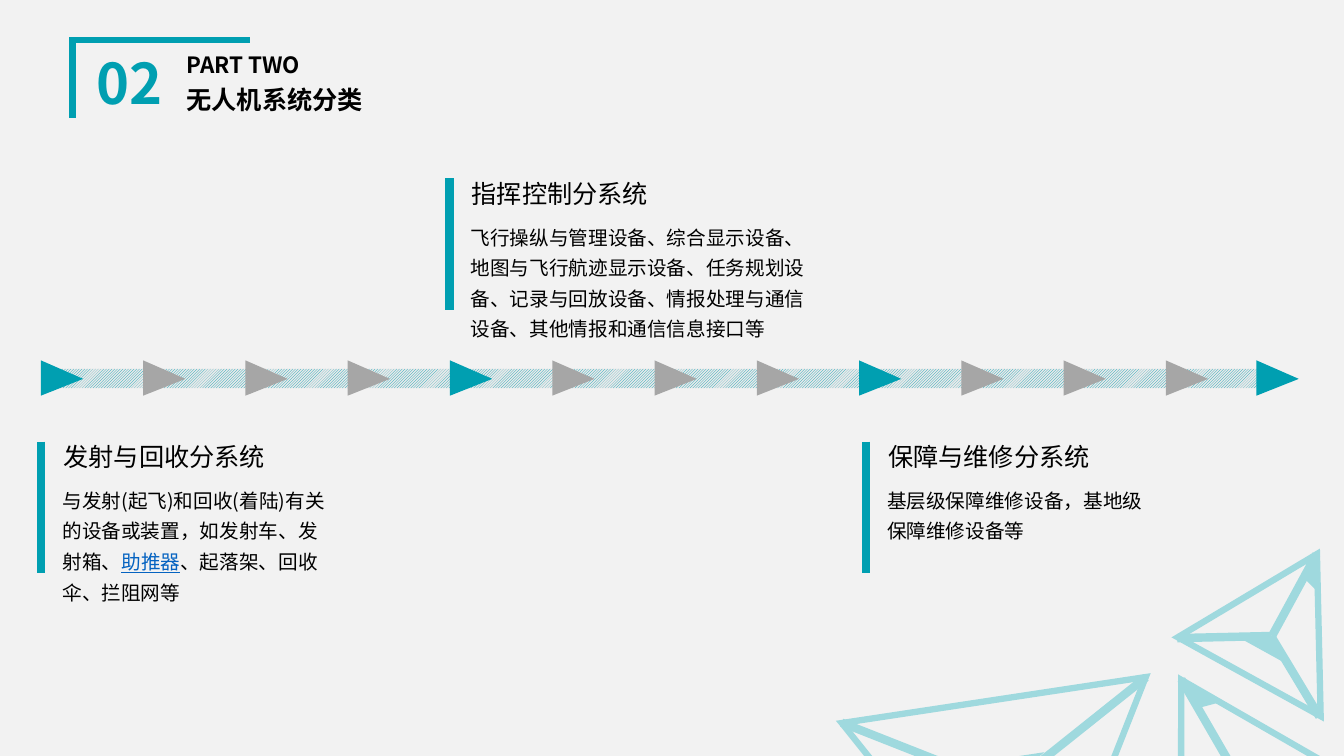
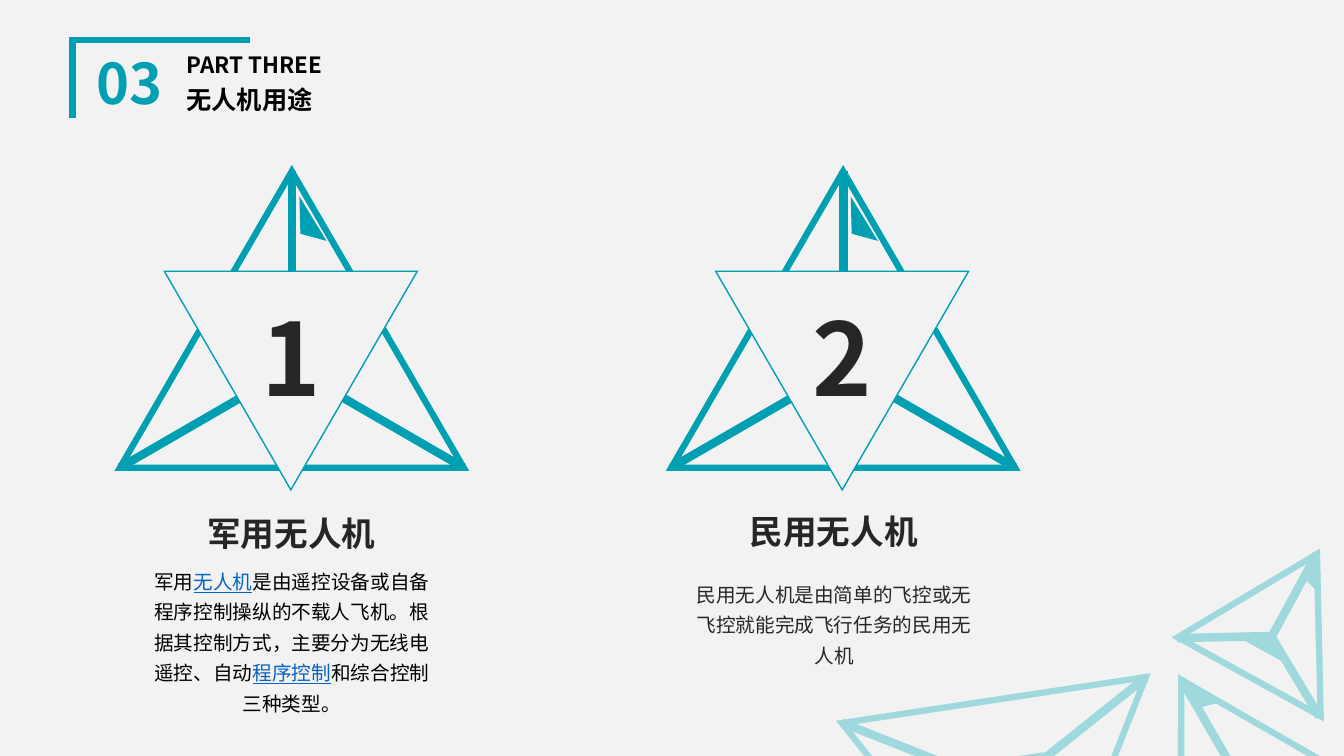
from lxml.etree import SubElement
from pptx import Presentation
from pptx.dml.color import RGBColor
from pptx.enum.dml import MSO_PATTERN
from pptx.enum.shapes import MSO_CONNECTOR, MSO_SHAPE
from pptx.enum.text import MSO_ANCHOR, MSO_AUTO_SIZE, PP_ALIGN
from pptx.oxml.ns import qn
from pptx.util import Pt

FONT = "Noto Sans CJK SC"
TEAL = RGBColor(0x00, 0x9F, 0xB1)
PALE = RGBColor(0x9F, 0xD9, 0xDE)
PAPER = RGBColor(0xF2, 0xF2, 0xF2)
STRIPE = RGBColor(0xE9, 0xE9, 0xE9)
GREY = RGBColor(0xA6, 0xA6, 0xA6)
BLACK = RGBColor(0, 0, 0)
DARK = RGBColor(0x26, 0x26, 0x26)
LINK = RGBColor(0x05, 0x63, 0xC1)

# Header placeholders: idx -> box and format
HEADER = {
    1: dict(box=(59, 35.3, 67, 52.6), size=40, color=TEAL, align=PP_ALIGN.CENTER),
    3: dict(box=(126, 35.3, 192.2, 24.5), size=16, color=BLACK),
    0: dict(box=(126, 56.2, 192.2, 31.7), size=18, color=BLACK),
}
BRACKET = [(51.8, 84.2), (51.8, 28.8), (178.6, 28.8)]

# Figures: outline (box, rotation, weight), solid (box, rotation),
# flag (corners), strut (from, to)
CORNER_FIGURES = [
    [("outline", (614.2, 499, 219.6, 189.4), 171.4, 4.5),
     ("strut", (818.6, 483.8), (719.3, 563)),
     ("strut", (601.2, 516.2), (720, 563)),
     ("solid", (689, 542.2, 56.9, 17.3), 171.4)],
    [("outline", (803.5, 477.4, 141.8, 122.4), 330, 4.5),
     ("strut", (843.8, 485.3), (884.2, 555.1)),
     ("flag", [(858.2, 504.7), (869, 501.8), (850.3, 491)])],
    [("outline", (858.2, 389.5, 116.6, 100.1), 28.9, 4.5),
     ("strut", (940.3, 396), (908.6, 454.3)),
     ("strut", (841, 455.8), (907.9, 454.3)),
     ("strut", (942.5, 511.9), (907.9, 454.3)),
     ("solid", (889.9, 455.8, 30.2, 9.4), 28.9),
     ("flag", [(933.1, 414), (939.6, 420.5), (938.9, 403.2)])],
]
EMBLEM = [
    ("outline", (0, 122.4, 245.5, 211.7), 0, 4.5),
    ("strut", (123, 122.4), (123, 262.4)),
    ("strut", (0, 334), (123, 262.8)),
    ("strut", (245.5, 334), (122.5, 262.8)),
    ("solid", (90.7, 272.2, 64, 19.4), 0),
    ("flag", [(128.9, 167), (147.6, 172.1), (128.2, 140.4)]),
    ("outline", (31.7, 193.7, 180.7, 156.2), 180, 1),
]

# Words between bars are shown as links
SUBSYSTEMS = [
    (29.5, 315.4, 206, "发射与回收分系统",
     "与发射(起飞)和回收(着陆)有关的设备或装置，如发射车、发射箱、|助推器|、起落架、回收伞、拦阻网等"),
    (321.1, 127.4, 255, "指挥控制分系统",
     "飞行操纵与管理设备、综合显示设备、地图与飞行航迹显示设备、任务规划设备、"
     "记录与回放设备、情报处理与通信设备、其他情报和通信信息接口等"),
    (618.5, 315.4, 206, "保障与维修分系统", "基层级保障维修设备，基地级保障维修设备等"),
]
# number, emblem left, title position, text position, text colour, title, text
USES = [
    ("1", 85.7, (140.4, 362.9), (99.4, 398.2), BLACK, "军用无人机",
     "军用|无人机|是由遥控设备或自备程序控制操纵的不载人飞机。"
     "根据其控制方式，主要分为无线电遥控、自动|程序控制|和综合控制三种类型。"),
    ("2", 479.5, (527.8, 361.4), (486.7, 407.5), DARK, "民用无人机",
     "民用无人机是由简单的飞控或无飞控就能完成飞行任务的民用无人机"),
]


def pts(*values):
    return [Pt(v) for v in values]


def paint(shape, fill=None, line=None, weight=1):
    shape.shadow.inherit = False
    if fill is None:
        shape.fill.background()
    else:
        shape.fill.solid()
        shape.fill.fore_color.rgb = fill
    if line is None:
        shape.line.fill.background()
    else:
        shape.line.color.rgb = line
        shape.line.width = Pt(weight)
        SubElement(shape.line._get_or_add_ln(), qn("a:miter"), lim="800000")
    return shape


def triangle(shapes, box, rotation, **colors):
    shape = paint(shapes.add_shape(MSO_SHAPE.ISOSCELES_TRIANGLE, *pts(*box)), **colors)
    shape.rotation = rotation
    return shape


def polyline(shapes, corners, close, **colors):
    first, *rest = [pts(*c) for c in corners]
    builder = shapes.build_freeform(*first)
    builder.add_line_segments(rest, close=close)
    return paint(builder.convert_to_shape(), **colors)


def strut(shapes, start, end, color):
    line = shapes.add_connector(MSO_CONNECTOR.STRAIGHT, *pts(*start, *end))
    line.line.color.rgb = color
    line.line.width = Pt(6)
    SubElement(line._element.spPr, qn("a:effectLst"))


def draw_figure(s, parts, color, edge=None, dx=0):
    group = s.shapes.add_group_shape()

    def shift(point):
        return (point[0] + dx, *point[1:])

    for kind, *args in parts:
        if kind == "strut":
            strut(group.shapes, *map(shift, args), color)
        elif kind == "flag":
            polyline(group.shapes, map(shift, args[0]), True, fill=color, line=edge)
        elif kind == "solid":
            triangle(group.shapes, shift(args[0]), args[1], fill=color, line=edge)
        else:
            box, rotation, weight = args
            triangle(group.shapes, shift(box), rotation, fill=PAPER, line=color, weight=weight)
    return group


def write(tf, text, size, color, bold=False, **paragraph):
    p = tf.paragraphs[0]
    for name, value in paragraph.items():
        setattr(p, name, value)
    for i, piece in enumerate(text.split("|")):
        linked = i % 2 == 1
        r = p.add_run()
        r.text = piece
        style = dict(name=FONT, size=Pt(size), bold=bold, underline=linked or None)
        for name, value in style.items():
            setattr(r.font, name, value)
        r.font.color.rgb = LINK if linked else color
        SubElement(r.font._element, qn("a:ea"), typeface=FONT)


def add_text(shapes, box, text, size, color, wrap=True, **style):
    tf = shapes.add_textbox(*pts(*box)).text_frame
    tf.word_wrap = wrap
    tf.auto_size = MSO_AUTO_SIZE.SHAPE_TO_FIT_TEXT
    write(tf, text, size, color, **style)


def prepare_layout(layout):
    layout.background.fill.solid()
    layout.background.fill.fore_color.rgb = PAPER
    for ph in list(layout.placeholders):
        idx = ph.placeholder_format.idx
        if idx in HEADER:
            ph.left, ph.top, ph.width, ph.height = pts(*HEADER[idx]["box"])
        else:
            ph._element.getparent().remove(ph._element)


def decorate_layout(layout, s):
    """Draw the shared artwork on s, then move it to the layout."""
    art = [polyline(s.shapes, BRACKET, False, line=TEAL, weight=4.5)]
    art += [draw_figure(s, parts, PALE, edge=PALE) for parts in CORNER_FIGURES]
    for shape in art:
        layout.shapes._spTree.append(shape._element)


def add_slide(prs, layout, number, part, title):
    s = prs.slides.add_slide(layout)
    for idx, text in ((1, number), (3, part), (0, title)):
        style = HEADER[idx]
        tf = s.placeholders[idx].text_frame
        tf.vertical_anchor = MSO_ANCHOR.MIDDLE
        tf.auto_size = MSO_AUTO_SIZE.NONE
        write(tf, text, style["size"], style["color"], bold=True, line_spacing=0.9,
              space_before=Pt(10), alignment=style.get("align", PP_ALIGN.LEFT))
    return s


def fill_subsystems(s):
    band = paint(s.shapes.add_shape(MSO_SHAPE.RECTANGLE, *pts(29.5, 263.5, 880.6, 13.7)))
    band.fill.patterned()
    band.fill.pattern = MSO_PATTERN.LIGHT_UPWARD_DIAGONAL
    band.fill.fore_color.rgb = TEAL
    band.fill.back_color.rgb = STRIPE
    for i in range(13):
        left = min(31.7 + 73.05 * i, 900)
        arrow = triangle(s.shapes, (left, 254.9, 25.2, 30.2), 90,
                         fill=GREY if i % 4 else TEAL)
        arrow.adjustments[0] = 0.525
    for x, y, width, title, text in SUBSYSTEMS:
        strut(s.shapes, (x, y), (x, y + 94), TEAL)
        add_text(s.shapes, (x + 8.8, y - 3.6, 213, 29), title, 18, BLACK)
        add_text(s.shapes, (x + 8, y + 25.2, width, 93.6), text, 14, BLACK, line_spacing=1.3)


def fill_uses(s):
    center = dict(alignment=PP_ALIGN.CENTER)
    for number, left, title_at, text_at, color, title, text in USES:
        emblem = draw_figure(s, EMBLEM, TEAL, dx=left)
        add_text(emblem.shapes, (left + 92.9, 207.4, 59, 94.3), number, 72, DARK,
                 wrap=False, bold=True, **center)
        add_text(s.shapes, (*title_at, 135.4, 36), title, 24, DARK,
                 wrap=False, bold=True, **center)
        add_text(s.shapes, (*text_at, 218.2, 71.3), text, 14, color,
                 line_spacing=1.3, **center)


def main():
    prs = Presentation()
    prs.slide_width, prs.slide_height = pts(960, 540)
    layout = prs.slide_layouts[4]
    prepare_layout(layout)
    s = add_slide(prs, layout, "02", "PART TWO", "无人机系统分类")
    decorate_layout(layout, s)
    fill_subsystems(s)
    fill_uses(add_slide(prs, layout, "03", "PART THREE", "无人机用途"))
    prs.save("out.pptx")


if __name__ == "__main__":
    main()
